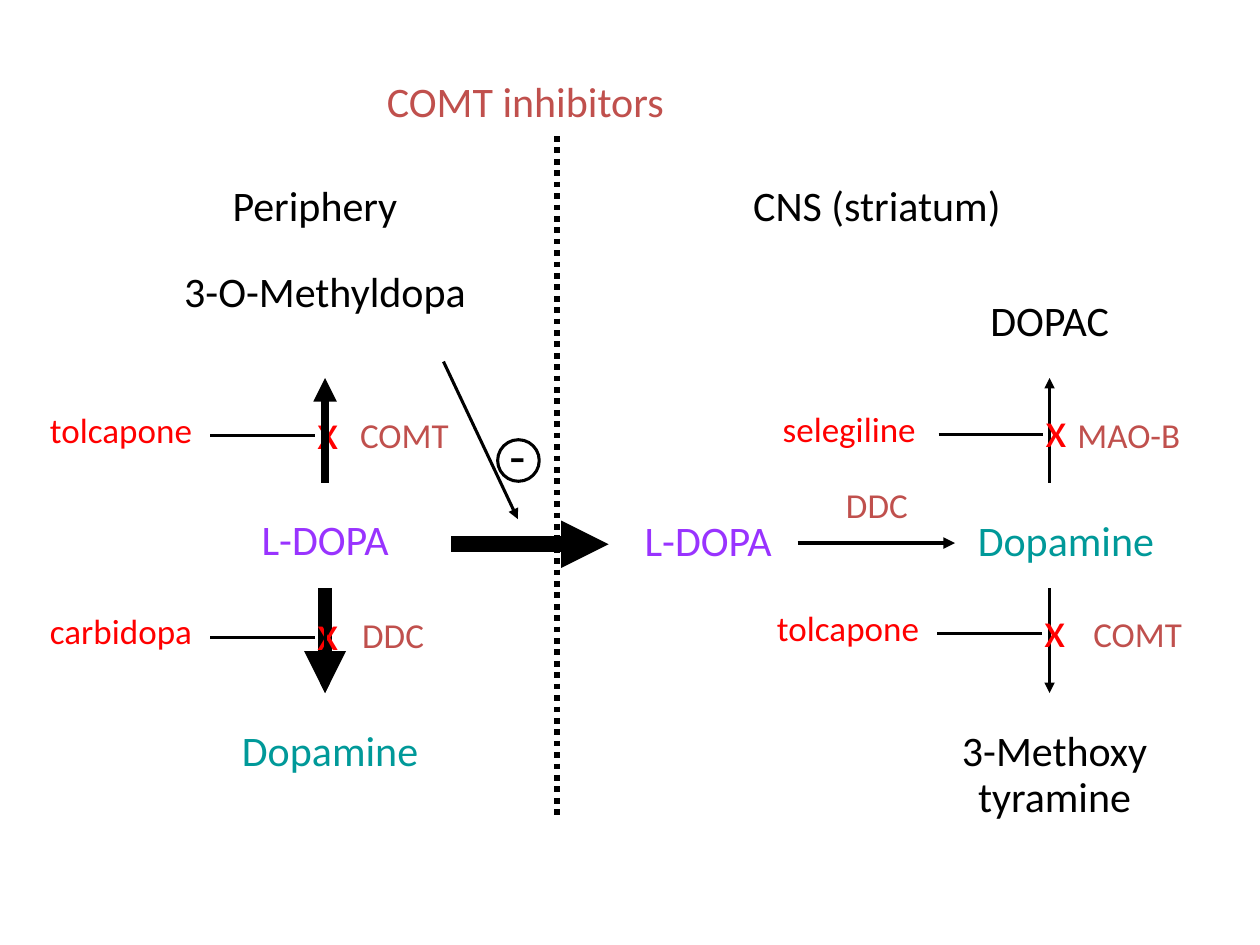
from lxml import etree
from pptx import Presentation
from pptx.dml.color import RGBColor
from pptx.enum import dml, shapes, text
from pptx.oxml.ns import qn
from pptx.util import Inches, Pt

BLACK = RGBColor(0, 0, 0)
BRICK = RGBColor(0xC0, 0x50, 0x4D)
PURPLE = RGBColor(0x99, 0x33, 0xFF)
TEAL = RGBColor(0, 0x99, 0x99)
RED = RGBColor(0xFF, 0, 0)
FONT = "Calibri"

# Heights shared by both halves, measured from the top of their boxes
UP_ARROW = (2.41, 1.58)
DOWN_ARROW = (3.25, 4.08)
TRANSPORT = 2.9


def add_label(slide, wording, centre, top, *, width=2.58, height=0.46, size=24,
              color=BLACK, spacing=0.9, align=text.PP_ALIGN.CENTER):
    """Add a text box centred on the given x position."""
    box = slide.shapes.add_textbox(Inches(centre - width / 2), Inches(top),
                                   Inches(width), Inches(height))
    box.text_frame.word_wrap = True
    paragraph = box.text_frame.paragraphs[0]
    paragraph.alignment = align
    paragraph.line_spacing = spacing
    run = paragraph.add_run()
    run.text = wording
    run.font.name = FONT
    run.font.size = Pt(size)
    run.font.color.rgb = color


def add_line(slide, start, end, *, weight=1.75, arrow=False, dash=None):
    """Add a straight black line, with an arrowhead at its end if asked."""
    line = slide.shapes.add_connector(
        shapes.MSO_CONNECTOR.STRAIGHT, *(Inches(value) for value in (*start, *end)))
    line.line.color.rgb = BLACK
    line.line.width = Pt(weight)
    if dash is not None:
        line.line.dash_style = dash
    properties = line._element.spPr
    if arrow:
        etree.SubElement(properties.find(qn("a:ln")), qn("a:tailEnd"), type="triangle")
    etree.SubElement(properties, qn("a:effectLst"))


def add_enzyme(slide, name, centre, top):
    add_label(slide, name, centre, top, width=1.8, height=0.4, size=20, color=BRICK)


def add_inhibitor(slide, name, left, top):
    """Add a drug name, its line and the cross that blocks a pathway."""
    add_label(slide, name, left + 0.96, top, width=1.92, height=0.4, size=20, color=RED)
    add_line(slide, (left + 1.67, top + 0.23), (left + 2.5, top + 0.23))
    add_label(slide, "x", left + 2.6, top - 0.05, width=0.75, height=0.52,
              size=28, color=RED)


def add_vertical_arrow(slide, x, top, span, weight=1.75):
    start, end = span
    add_line(slide, (x, top + start), (x, top + end), weight=weight, arrow=True)


def add_periphery(slide, left, top):
    # Metabolites
    for name, centre, offset, color in (
            ("Periphery", 2.5, 0, BLACK),
            ("3-O-Methyldopa", 2.58, 0.68, BLACK),
            ("L-DOPA", 2.58, 2.65, PURPLE),
            ("Dopamine", 2.62, 4.33, TEAL)):
        add_label(slide, name, left + centre, top + offset, color=color)
    add_enzyme(slide, "COMT", left + 3.21, top + 1.85)
    add_enzyme(slide, "DDC", left + 3.12, top + 3.44)

    # Pathways: a thin stroke crosses the lower red mark
    axis = left + 2.58
    add_vertical_arrow(slide, axis, top, DOWN_ARROW, weight=8)
    add_inhibitor(slide, "carbidopa", left, top + 3.41)
    add_inhibitor(slide, "tolcapone", left, top + 1.81)
    add_vertical_arrow(slide, axis, top, UP_ARROW, weight=4.5)
    add_vertical_arrow(slide, axis, top, DOWN_ARROW)


def add_cns(slide, left, top):
    # Metabolites
    for name, centre, offset, color in (
            ("CNS (striatum)", 2.54, 0, BLACK),
            ("L-DOPA", 1.2, 2.66, PURPLE),
            ("Dopamine", 4.04, 2.66, TEAL),
            ("DOPAC", 3.91, 0.91, BLACK),
            ("3-Methoxy tyramine", 3.95, 4.33, BLACK)):
        add_label(slide, name, left + centre, top + offset, color=color)

    # Pathways
    for span in (UP_ARROW, DOWN_ARROW):
        add_vertical_arrow(slide, left + 3.91, top, span)
    add_line(slide, (left + 1.91, top + 2.89), (left + 3.16, top + 2.89),
             weight=2.25, arrow=True)

    # Enzymes and their inhibitors
    add_enzyme(slide, "MAO-B", left + 4.54, top + 1.85)
    add_enzyme(slide, "COMT", left + 4.61, top + 3.43)
    add_enzyme(slide, "DDC", left + 2.54, top + 2.41)
    add_inhibitor(slide, "tolcapone", left + 1.35, top + 3.38)
    add_inhibitor(slide, "selegiline", left + 1.36, top + 1.8)


def add_transport(slide, left, top):
    # L-DOPA crossing, slowed by 3-O-methyldopa
    add_line(slide, (left, top + TRANSPORT), (left + 1.25, top + TRANSPORT),
             weight=9, arrow=True)
    add_line(slide, (left - 0.06, top + 1.45), (left + 0.53, top + 2.7), arrow=True)

    # Minus sign in a circle
    add_label(slide, "-", left + 0.53, top + 1.89, width=0.33, height=0.6, size=30,
              spacing=1.0, align=text.PP_ALIGN.LEFT)
    circle = slide.shapes.add_shape(shapes.MSO_SHAPE.OVAL, Inches(left + 0.37),
                                    Inches(top + 2.07), Inches(0.33), Inches(0.33))
    circle.shadow.inherit = False
    circle.fill.background()
    circle.line.color.rgb = BLACK
    circle.line.width = Pt(1.75)


def main():
    presentation = Presentation()
    presentation.slide_width = Inches(10)
    presentation.slide_height = Inches(7.5)
    slide = presentation.slides.add_slide(presentation.slide_layouts[6])

    add_label(slide, "COMT inhibitors", 4.17, 0.55, width=6.83, height=0.5,
              color=BRICK, spacing=1.0)
    # Barrier between the two halves
    barrier, top = 4.42, 1.42
    add_line(slide, (barrier, 1.08), (barrier, 6.5), weight=3.25,
             dash=dml.MSO_LINE.ROUND_DOT)
    add_periphery(slide, 0, top)
    add_cns(slide, barrier, top)
    add_transport(slide, 3.58, top)
    presentation.save("out.pptx")


if __name__ == "__main__":
    main()
